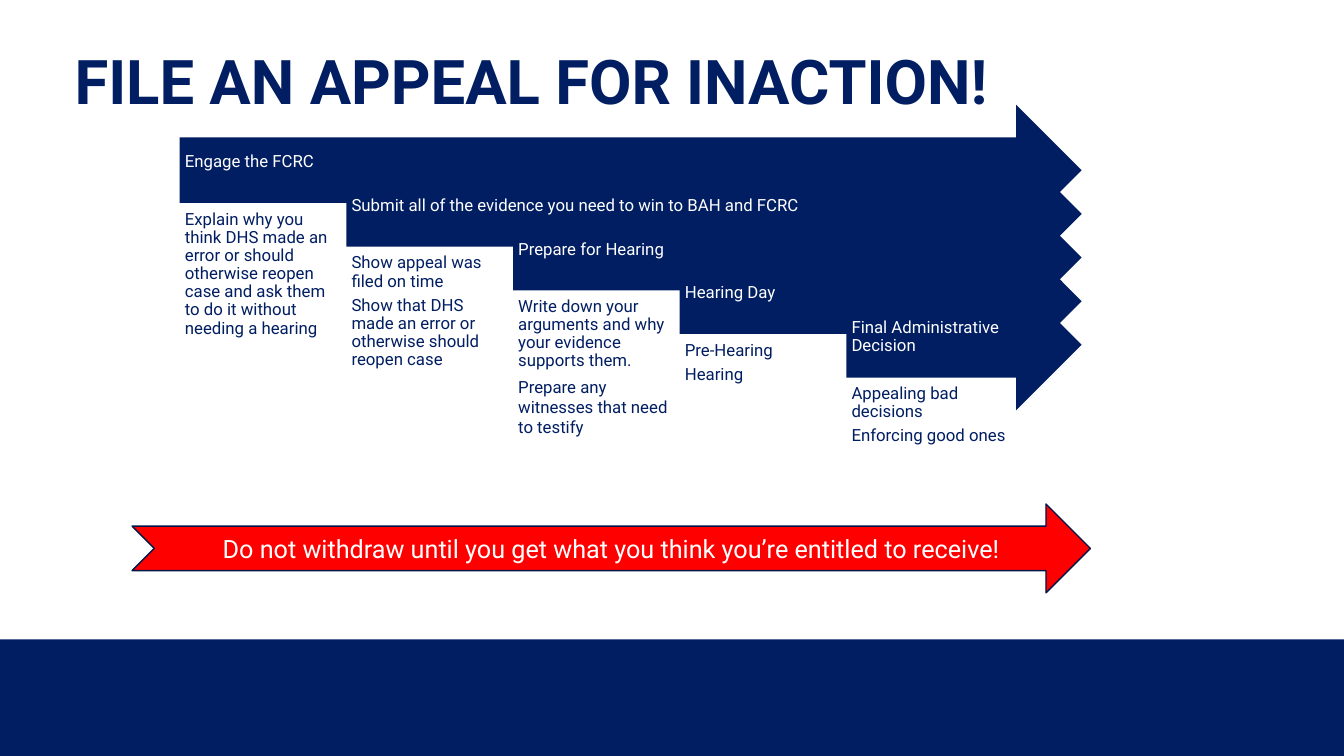
from pptx import Presentation
from pptx.dml.color import RGBColor
from pptx.enum.shapes import MSO_SHAPE
from pptx.enum.text import MSO_ANCHOR, PP_ALIGN
from pptx.util import Cm, Pt

COLOURS = {"navy": "001E61", "outline": "001648", "red": "FF0000", "white": "FFFFFF"}
FONT = "Roboto"
STEP_LEFT, STEP_TOP, STEP_RIGHT = 4.53, 2.64, 27.26
STEP_ACROSS, STEP_DOWN = 4.2, 1.1
ARROW_HEIGHT, DETAIL_OFFSET, DETAIL_HEIGHT = 3.3, 2.54, 6.08
STEPS = [
    ("Engage the FCRC", [
        ("Explain why you think DHS made an error or should otherwise reopen "
         "case and ask them to do it without needing a hearing", 0.9)]),
    ("Submit all of the evidence you need to win to BAH and FCRC", [
        ("Show appeal was filed on time", 0.9),
        ("Show that DHS made an error or otherwise should reopen case", 0.9)]),
    ("Prepare for Hearing", [
        ("Write down your arguments and why your evidence supports them.", 0.9),
        ("Prepare any witnesses that need to testify", 1.0)]),
    ("Hearing Day", [("Pre-Hearing", 0.9), ("Hearing", 0.9)]),
    ("Final Administrative Decision", [
        ("Appealing bad decisions", 0.9),
        ("Enforcing good ones", 0.9)]),
]


def colour(name):
    return RGBColor.from_string(COLOURS[name])


def add_block(page, kind, left, top, width, height, fill, line=None):
    block = page.shapes.add_shape(kind, Cm(left), Cm(top), Cm(width), Cm(height))
    block.shadow.inherit = False
    block.fill.solid()
    block.fill.fore_color.rgb = colour(fill)
    if line:
        block.line.color.rgb = colour(line)
        block.line.width = Pt(1)
    else:
        block.line.fill.background()
    return block


def set_frame(box, anchor, margins=(0.25, 0.13, 0.25, 0.13)):
    frame = box.text_frame
    frame.word_wrap = True
    frame.vertical_anchor = anchor
    (frame.margin_left, frame.margin_top,
     frame.margin_right, frame.margin_bottom) = map(Cm, margins)
    return frame


def write(frame, lines, size, text_colour, align=PP_ALIGN.LEFT, after=0, bold=False):
    for index, (text, spacing) in enumerate(lines):
        para = frame.add_paragraph() if index else frame.paragraphs[0]
        para.alignment = align
        para.line_spacing = spacing
        para.space_after = Pt(after)
        span = para.add_run()
        span.text = text
        span.font.name = FONT
        span.font.size = Pt(size)
        span.font.bold = bold
        span.font.color.rgb = colour(text_colour)


def add_title(page, text):
    box = page.shapes.add_textbox(Cm(1.63), Cm(0.3), Cm(29.21), Cm(3.68))
    write(set_frame(box, MSO_ANCHOR.MIDDLE), [(text, 0.9)], 44, "navy", bold=True)


def add_step(page, index, heading, details):
    left = STEP_LEFT + index * STEP_ACROSS
    top = STEP_TOP + index * STEP_DOWN
    arrow = add_block(page, MSO_SHAPE.RIGHT_ARROW, left, top,
                      STEP_RIGHT - left, ARROW_HEIGHT, "navy")
    frame = set_frame(arrow, MSO_ANCHOR.MIDDLE, (0.13, 0.13, 0.71, 0.53))
    write(frame, [(heading, 0.9)], 12, "white", after=4.2)
    panel = add_block(page, MSO_SHAPE.RECTANGLE, left, top + DETAIL_OFFSET,
                      STEP_ACROSS, DETAIL_HEIGHT, "white")
    frame = set_frame(panel, MSO_ANCHOR.TOP, (0.13, 0.13, 0.13, 0.13))
    write(frame, details, 12, "navy", after=4.2)


def add_warning(page, text):
    arrow = add_block(page, MSO_SHAPE.NOTCHED_RIGHT_ARROW, 3.33, 12.7,
                      24.15, 2.24, "red", "outline")
    write(set_frame(arrow, MSO_ANCHOR.MIDDLE), [(text, 1.0)], 18, "white",
          PP_ALIGN.CENTER)


def main():
    deck = Presentation()
    deck.slide_width, deck.slide_height = Cm(33.87), Cm(19.05)
    page = deck.slides.add_slide(deck.slide_layouts[6])
    add_block(page, MSO_SHAPE.RECTANGLE, 0, 16.11, 33.87, 2.94, "navy")
    add_title(page, "FILE AN APPEAL FOR INACTION!")
    for index, (heading, details) in enumerate(STEPS):
        add_step(page, index, heading, details)
    add_warning(page, "Do not withdraw until you get what you think you’re entitled to receive!")
    deck.save("out.pptx")


if __name__ == "__main__":
    main()
